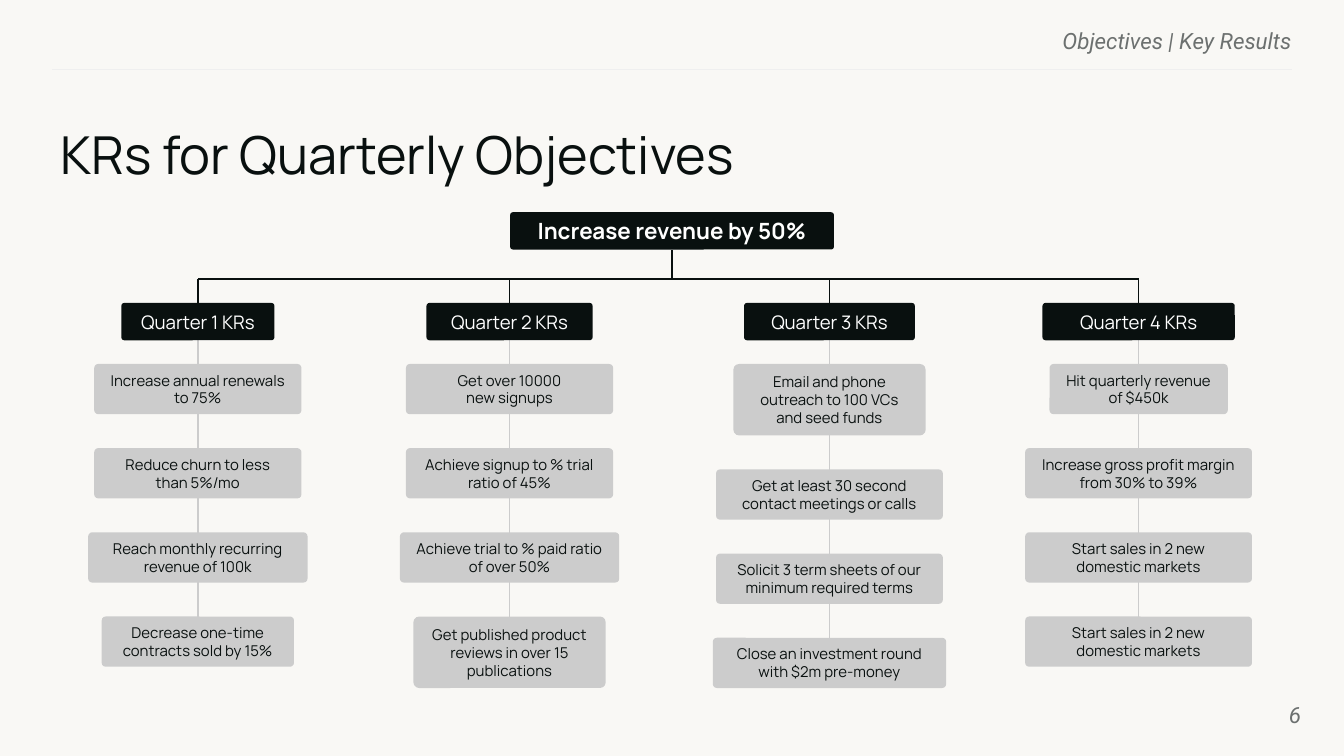
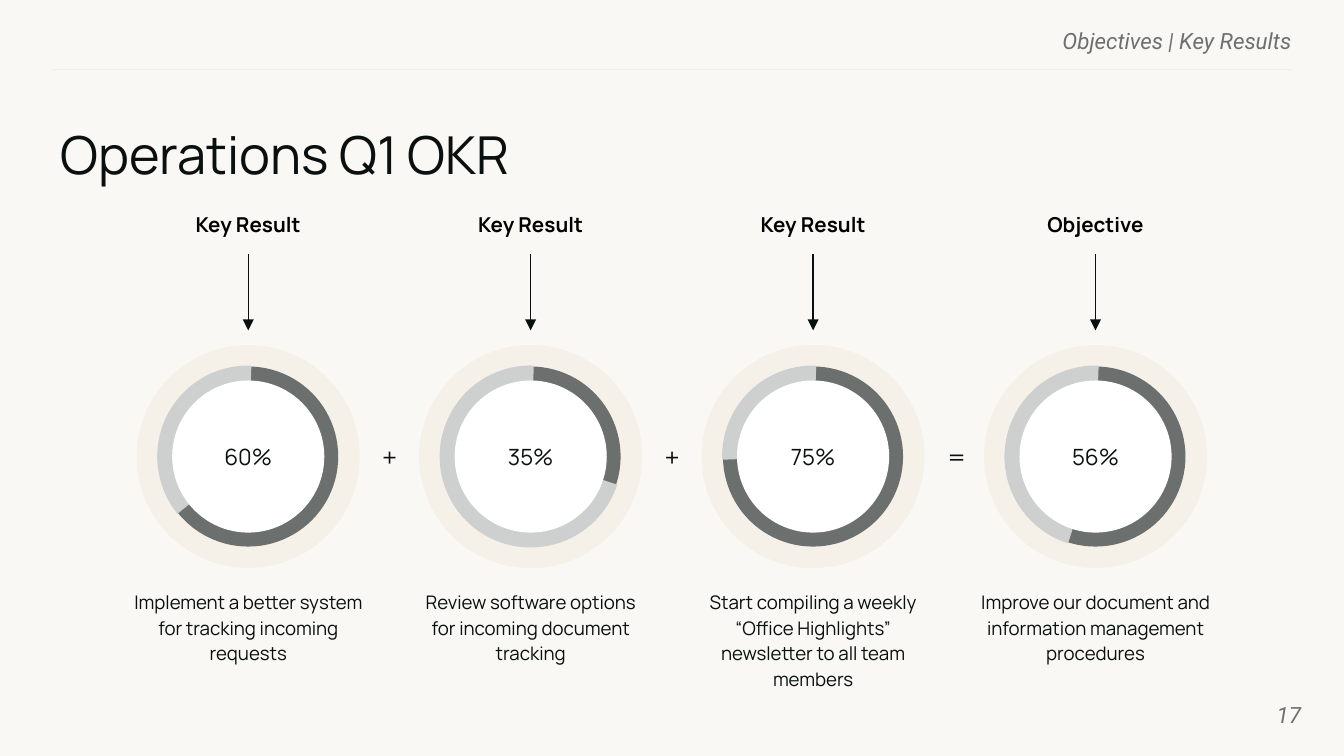
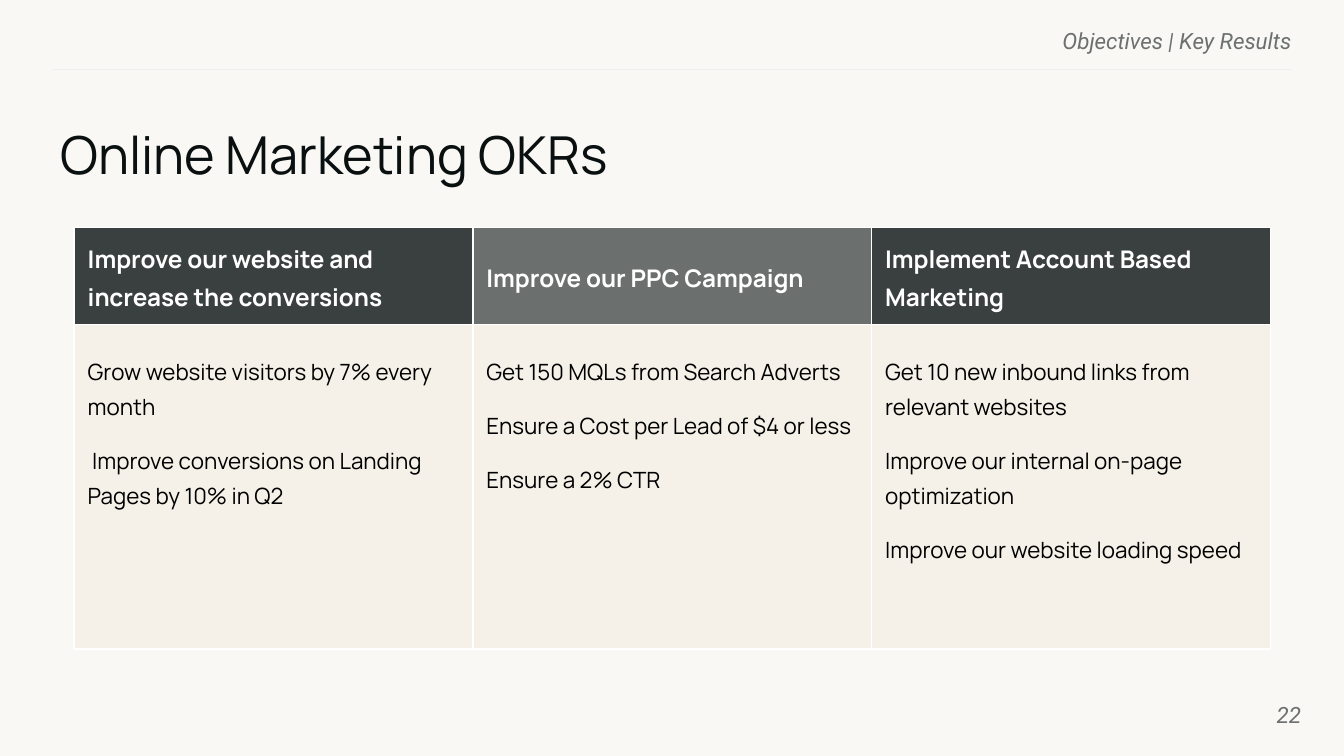
"""Build three OKR slides: a key result tree, a progress sum and an objectives table."""
from lxml import etree
from pptx import Presentation
from pptx.dml.color import RGBColor
from pptx.enum.shapes import MSO_CONNECTOR, MSO_SHAPE
from pptx.enum.text import MSO_ANCHOR, MSO_AUTO_SIZE, PP_ALIGN
from pptx.oxml.ns import qn
from pptx.util import Pt

STRAIGHT = MSO_CONNECTOR.STRAIGHT
ROUNDED, OVAL, PIE = MSO_SHAPE.ROUNDED_RECTANGLE, MSO_SHAPE.OVAL, MSO_SHAPE.PIE
LEFT, CENTER, RIGHT = PP_ALIGN.LEFT, PP_ALIGN.CENTER, PP_ALIGN.RIGHT
TOP, MIDDLE = MSO_ANCHOR.TOP, MSO_ANCHOR.MIDDLE
SIDE_TOP, SIDE_BOTTOM = 0, 2

COLORS = {
    "paper": "F9F8F5", "ink": "09100F", "black": "000000", "white": "FFFFFF",
    "muted": "6C706F", "rule": "EFEFEF", "card": "CCCCCC", "sand": "F5F1E8",
    "slate": "3A403F", "steel": "6B706F", "silver": "CECFCF",
}

HEADER = "Objectives | Key Results"

TREE = {
    "title": "KRs for Quarterly Objectives",
    "page": "6",
    "root": "Increase revenue by 50%",
    "columns": [
        ("Quarter 1 KRs", 106, 82, [
            (111, 2, ["Increase annual renewals to 75%"]),
            (111, 2, ["Reduce churn to less than 5%/mo"]),
            (117.5, 2, ["Reach monthly recurring revenue of 100k"]),
            (103, 2, ["Decrease one-time", "contracts sold by 15%"]),
        ]),
        ("Quarter 2 KRs", 273, 89, [
            (111, 2, ["Get over 10000", "new signups"]),
            (111, 2, ["Achieve signup to % trial ratio of 45%"]),
            (117.5, 2, ["Achieve trial to % paid ratio of over 50%"]),
            (103, 3, ["Get published product reviews in over 15 publications"]),
        ]),
        ("Quarter 3 KRs", 444.4, 91.5, [
            (103, 3, ["Email and phone outreach to 100 VCs and seed funds"]),
            (121.5, 2, ["Get at least 30 second contact meetings or calls"]),
            (121.5, 2, ["Solicit 3 term sheets of our minimum required terms"]),
            (125, 2, ["Close an investment round with $2m pre-money"]),
        ]),
        ("Quarter 4 KRs", 610, 103, [
            (95.5, 2, ["Hit quarterly revenue of $450k"]),
            (121.5, 2, ["Increase gross profit margin from 30% to 39%"]),
            (121.5, 2, ["Start sales in 2 new domestic markets"]),
            (121.5, 2, ["Start sales in 2 new domestic markets"]),
        ]),
    ],
}

PROGRESS = {
    "title": "Operations Q1 OKR",
    "page": "17",
    "dials": [
        ("Key Result", "60%", 141, 132.5,
         "Implement a better system for tracking incoming requests"),
        ("Key Result", "35%", 18, 122.5,
         "Review software options for incoming document tracking"),
        ("Key Result", "75%", 178, 132.5,
         "Start compiling a weekly “Office Highlights” newsletter to all team members"),
        ("Objective", "56%", 107.5, 132.5,
         "Improve our document and information management procedures"),
    ],
    "operators": ["+", "+", "="],
}

MARKETING = {
    "title": "Online Marketing OKRs",
    "page": "22",
    "columns": [
        ("Improve our website and increase the conversions", "slate", [
            "Grow website visitors by 7% every month",
            " Improve conversions on Landing Pages by 10% in Q2",
        ]),
        ("Improve our PPC Campaign", "steel", [
            "Get 150 MQLs from Search Adverts",
            "Ensure a Cost per Lead of $4 or less",
            "Ensure a 2% CTR",
        ]),
        ("Implement Account Based Marketing", "slate", [
            "Get 10 new inbound links from relevant websites",
            "Improve our internal on-page optimization",
            "Improve our website loading speed",
        ]),
    ],
}


def style(size, color="ink", name="Manrope", bold=False, italic=False, align=CENTER,
          anchor=MIDDLE, margins=(7.2, 7.2), spacing=1.0, gap=0):
    """Return the format values of one text style."""
    side, end = (Pt(margin) for margin in margins)
    return {
        "color": color,
        "font": {"name": name, "size": Pt(size), "bold": bold, "italic": italic},
        "paragraph": {"alignment": align, "line_spacing": spacing, "space_before": Pt(0)},
        "box": {"margin_left": side, "margin_right": side, "margin_top": end,
                "margin_bottom": end, "vertical_anchor": anchor},
        "gap": Pt(gap),
    }


STYLES = {
    "title": style(28, align=LEFT, anchor=TOP, margins=(0, 0)),
    "header": style(12, "muted", "Roboto", italic=True, align=RIGHT, anchor=TOP, margins=(0, 0)),
    "page": style(12, "muted", "Roboto", italic=True, align=RIGHT, margins=(0, 0)),
    "root": style(12, "white", bold=True),
    "quarter": style(10, "white"),
    "card": style(8),
    "value": style(12, margins=(7.2, 3.6)),
    "label": style(11, "black", bold=True, anchor=TOP, margins=(2.9, 1.4)),
    "caption": style(10, anchor=TOP, margins=(2.9, 1.4), spacing=1.15),
    "operator": style(14),
    "table_head": style(13, "white", bold=True, align=LEFT, margins=(7.2, 3.6), spacing=1.15),
    "table_body": style(12, "black", align=LEFT, anchor=TOP, margins=(7.2, 14.4),
                        spacing=1.15, gap=10),
}


def rgb(color):
    """Return a named colour."""
    return RGBColor.from_string(COLORS[color])


def apply(target, values):
    """Set every attribute in a dict of values."""
    for attribute, value in values.items():
        setattr(target, attribute, value)


def write(holder, lines, style_name):
    """Write paragraphs into a shape or table cell."""
    text_style = STYLES[style_name]
    frame = holder.text_frame
    apply(holder if hasattr(holder, "is_merge_origin") else frame, text_style["box"])
    frame.word_wrap = True
    for index, line in enumerate(lines):
        paragraph = frame.add_paragraph() if index else frame.paragraphs[0]
        apply(paragraph, text_style["paragraph"])
        if index:
            paragraph.space_before = text_style["gap"]
        run = paragraph.add_run()
        run.text = line
        apply(run.font, text_style["font"])
        run.font.color.rgb = rgb(text_style["color"])


def add_text(slide, box, lines, style_name):
    """Add a text box."""
    write(slide.shapes.add_textbox(*map(Pt, box)), lines, style_name)


def add_block(slide, kind, box, fill, adjustments=()):
    """Add a filled shape without outline or shadow."""
    shape = slide.shapes.add_shape(kind, *map(Pt, box))
    shape.shadow.inherit = False
    shape.fill.solid()
    shape.fill.fore_color.rgb = rgb(fill)
    shape.line.fill.background()
    for index, value in enumerate(adjustments):
        shape.adjustments[index] = value
    return shape


def add_box(slide, center, top, width, height, fill, lines, style_name):
    """Add a rounded box with text, centred on a column."""
    box = (center - width / 2, top, width, height)
    shape = add_block(slide, ROUNDED, box, fill, [0.08])
    write(shape, lines, style_name)
    return shape


def add_disc(slide, kind, center, middle, diameter, fill, angles=()):
    """Add a circle or pie around a centre point, with angles in degrees."""
    box = (center - diameter / 2, middle - diameter / 2, diameter, diameter)
    return add_block(slide, kind, box, fill, [angle * 0.6 for angle in angles])


def add_line(slide, start, end, color, arrow=False):
    """Add a thin straight connector."""
    line = slide.shapes.add_connector(STRAIGHT, *map(Pt, start + end))
    line.line.color.rgb = rgb(color)
    line.line.width = Pt(0.75)
    if arrow:
        etree.SubElement(line.line._get_or_add_ln(), qn("a:tailEnd"), type="triangle")
    etree.SubElement(line.element.spPr, qn("a:effectLst"))
    return line


def start_slide(presentation, content):
    """Add a slide with its title, header and page number."""
    slide = presentation.slides.add_slide(presentation.slide_layouts[0])
    title, header = slide.placeholders
    for placeholder, box, text, style_name in (
        (title, (32.5, 65.5, 664.5, 37), content["title"], "title"),
        (header, (354, 14.5, 338, 13), HEADER, "header"),
    ):
        apply(placeholder, dict(zip(("left", "top", "width", "height"), map(Pt, box))))
        placeholder.text_frame.auto_size = MSO_AUTO_SIZE.NONE
        write(placeholder, [text], style_name)
    add_text(slide, (654, 367.5, 43, 31), [content["page"]], "page")
    return slide


def build_tree(presentation):
    """Draw the objective and its quarterly key results."""
    slide = start_slide(presentation, TREE)
    rule = add_line(slide, (692, 37.3), (28, 37.3), "rule")
    presentation.slide_layouts[0].element.cSld.spTree.append(rule.element)

    columns = TREE["columns"]
    branch_top, quarter_top, first_card, gap = 149.5, 162.3, 195, 18.2
    card_heights = {2: 26.9, 3: 38.3}
    for _, center, _, _ in columns:
        add_line(slide, (center, 353), (center, 173), "card")

    root = add_box(slide, 360, 113.7, 173.5, 20, "ink", [TREE["root"]], "root")
    trunk = add_line(slide, (360, branch_top), (360, branch_top), "ink")
    trunk.end_connect(root, SIDE_BOTTOM)
    add_line(slide, (columns[0][1], branch_top), (columns[-1][1], branch_top), "ink")

    for name, center, width, cards in columns:
        quarter = add_box(slide, center, quarter_top, width, 20, "ink", [name], "quarter")
        branch = add_line(slide, (center, branch_top), (center, quarter_top), "ink")
        branch.end_connect(quarter, SIDE_TOP)
        top = first_card
        for card_width, line_count, lines in cards:
            height = card_heights[line_count]
            add_box(slide, center, top, card_width, height, "card", lines, "card")
            top += height + gap


def build_progress(presentation):
    """Draw the progress dials that add up to the objective."""
    slide = start_slide(presentation, PROGRESS)
    first, step, middle = 133, 151.3, 244.6
    for index, (label, value, light_start, width, caption) in enumerate(PROGRESS["dials"]):
        center = first + index * step
        add_text(slide, (center - 76.5, 112.3, 153, 16), [label], "label")
        add_line(slide, (center, 136), (center, 177), "ink", arrow=True)
        add_disc(slide, OVAL, center, middle, 119.5, "sand")
        add_disc(slide, PIE, center, middle, 96.5, "steel", (270, 269.5))
        add_disc(slide, PIE, center, middle, 97.5, "silver", (light_start, 272))
        write(add_disc(slide, OVAL, center, middle, 81.5, "white"), [value], "value")
        add_text(slide, (center - width / 2, 313.3, width, 56), [caption], "caption")
    for index, operator in enumerate(PROGRESS["operators"]):
        center = first + (index + 0.5) * step
        add_text(slide, (center - 11, middle - 13.5, 22, 27), [operator], "operator")


def add_border(cell, side, width):
    """Draw one white border of a table cell."""
    border = etree.SubElement(cell._tc.get_or_add_tcPr(), qn(f"a:ln{side}"), w=str(Pt(width)))
    fill = etree.SubElement(border, qn("a:solidFill"))
    etree.SubElement(fill, qn("a:srgbClr"), val=COLORS["white"])


def build_marketing(presentation):
    """Lay out the marketing objectives as a table."""
    slide = start_slide(presentation, MARKETING)
    columns = MARKETING["columns"]
    column_width, row_heights = 213.6, (52.2, 173.8)
    table = slide.shapes.add_table(
        len(row_heights), len(columns), Pt(39.8), Pt(121.8),
        Pt(column_width * len(columns)), Pt(sum(row_heights))).table
    apply(table, {"first_row": False, "horz_banding": False})
    for row, height in zip(table.rows, row_heights):
        row.height = Pt(height)
    for column, (objective, fill, results) in enumerate(columns):
        table.columns[column].width = Pt(column_width)
        parts = (([objective], fill, "table_head", "B"), (results, "sand", "table_body", "T"))
        for row, (lines, cell_fill, style_name, inner_side) in enumerate(parts):
            cell = table.cell(row, column)
            for side in "LRTB":
                add_border(cell, side, 0.75 if side == inner_side else 1)
            cell.fill.solid()
            cell.fill.fore_color.rgb = rgb(cell_fill)
            write(cell, lines, style_name)


def main():
    """Build and save the presentation."""
    presentation = Presentation()
    presentation.slide_width, presentation.slide_height = Pt(720), Pt(405)
    background = presentation.slide_master.background.fill
    background.solid()
    background.fore_color.rgb = rgb("paper")
    build_tree(presentation)
    build_progress(presentation)
    build_marketing(presentation)
    presentation.save("out.pptx")


if __name__ == "__main__":
    main()
